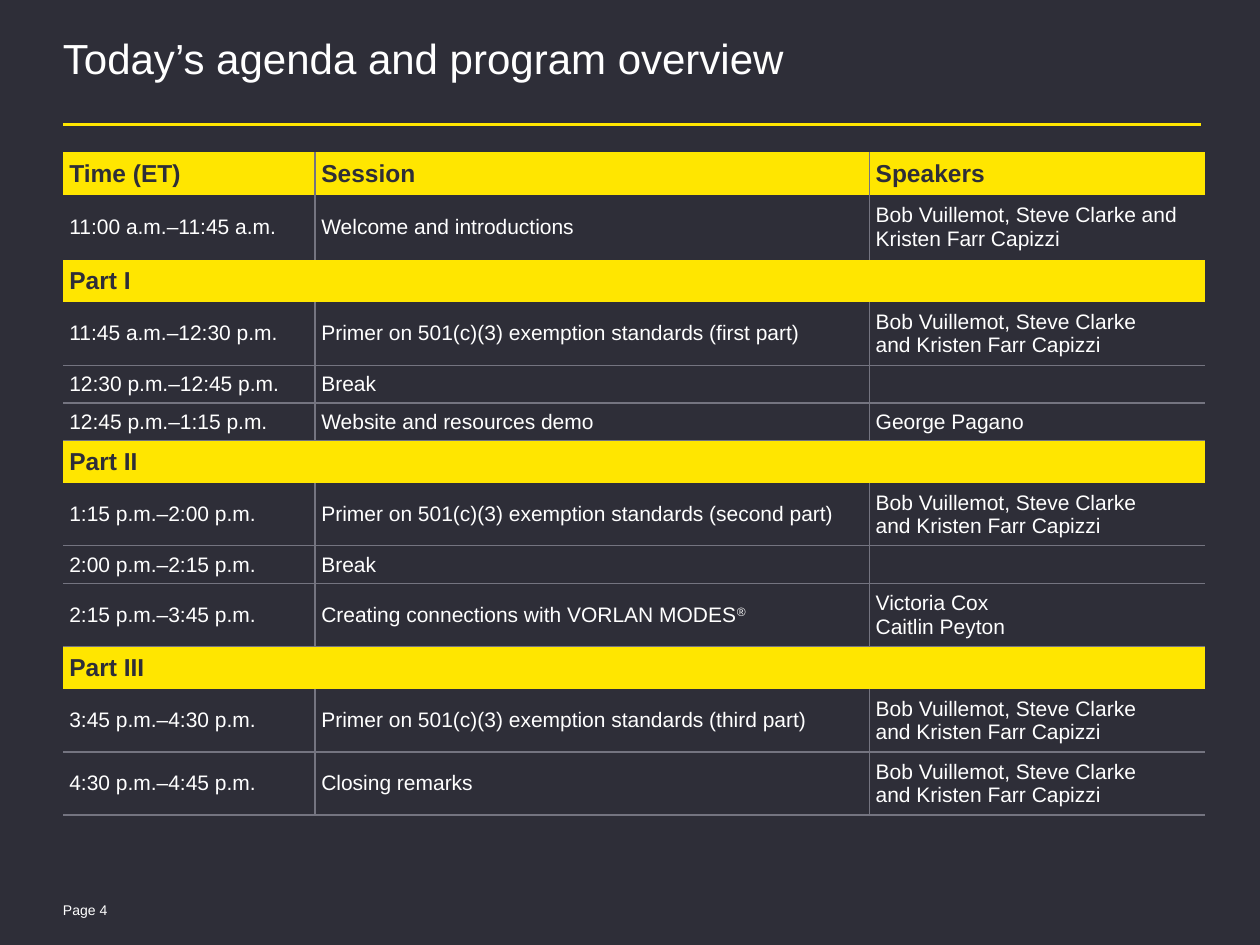
from dataclasses import dataclass

from pptx import Presentation
from pptx.dml.color import RGBColor
from pptx.enum.shapes import MSO_CONNECTOR
from pptx.enum.text import MSO_ANCHOR
from pptx.oxml.xmlchemy import OxmlElement
from pptx.util import Inches, Pt


@dataclass(frozen=True)
class Theme:
    font: str = "Arial"
    dark: RGBColor = RGBColor(0x2E, 0x2E, 0x38)
    yellow: RGBColor = RGBColor(0xFF, 0xE6, 0x00)
    white: RGBColor = RGBColor(0xFF, 0xFF, 0xFF)
    grey: RGBColor = RGBColor(0x74, 0x74, 0x80)
    title_size: int = 24
    bar_size: int = 14
    body_size: int = 12
    page_size: int = 8
    rule_width: float = 1.5
    border_width: float = 0.75


THEME = Theme()
PLAIN_TABLE_STYLE = "{2D5ABB26-0587-4C30-8999-92F81FD0307C}"
COLUMN_WIDTHS = (2, 4.4, 2.66)
BAR_HEIGHT = 0.32
HOSTS = "Bob Vuillemot, Steve Clarke\nand Kristen Farr Capizzi"
AGENDA = [
    (BAR_HEIGHT, "Time (ET)", "Session", "Speakers"),
    (0.52, "11:00 a.m.–11:45 a.m.", "Welcome and introductions",
     "Bob Vuillemot, Steve Clarke and Kristen Farr Capizzi"),
    (BAR_HEIGHT, "Part I"),
    (0.5, "11:45 a.m.–12:30 p.m.", "Primer on 501(c)(3) exemption standards (first part)", HOSTS),
    (0.3, "12:30 p.m.–12:45 p.m.", "Break", ""),
    (0.3, "12:45 p.m.–1:15 p.m.", "Website and resources demo", "George Pagano"),
    (BAR_HEIGHT, "Part II"),
    (0.47, "1:15 p.m.–2:00 p.m.", "Primer on 501(c)(3) exemption standards (second part)", HOSTS),
    (0.29, "2:00 p.m.–2:15 p.m.", "Break", ""),
    (0.48, "2:15 p.m.–3:45 p.m.", "Creating connections with VORLAN MODES®",
     "Victoria Cox\nCaitlin Peyton"),
    (BAR_HEIGHT, "Part III"),
    (0.5, "3:45 p.m.–4:30 p.m.", "Primer on 501(c)(3) exemption standards (third part)", HOSTS),
    (0.5, "4:30 p.m.–4:45 p.m.", "Closing remarks", HOSTS),
]


def style_run(run, size, color, bold=False):
    run.font.name = THEME.font
    run.font.size = Pt(size)
    run.font.color.rgb = color
    run.font.bold = bold


def add_text(slide, left, top, width, height, text, size, anchor):
    shape = slide.shapes.add_textbox(Inches(left), Inches(top), Inches(width), Inches(height))
    frame = shape.text_frame
    frame.word_wrap = True
    frame.vertical_anchor = anchor
    frame.margin_left = frame.margin_right = frame.margin_top = frame.margin_bottom = 0
    frame.text = text
    style_run(frame.paragraphs[0].runs[0], size, THEME.white)
    return frame.paragraphs[0]


def add_header(slide, left, top, width):
    title = add_text(slide, left, top, width, 0.65, "Today’s agenda and program overview",
                     THEME.title_size, MSO_ANCHOR.TOP)
    title.line_spacing = 0.85
    rule_top = Inches(top + 0.67)
    rule = slide.shapes.add_connector(MSO_CONNECTOR.STRAIGHT, Inches(left), rule_top,
                                      Inches(left + width), rule_top)
    rule.line.color.rgb = THEME.yellow
    rule.line.width = Pt(THEME.rule_width)
    rule._element.spPr.append(OxmlElement("a:effectLst"))


def add_borders(cell, sides):
    properties = cell._tc.get_or_add_tcPr()
    for side in sides:
        line = OxmlElement(f"a:ln{side}")
        line.set("w", str(Pt(THEME.border_width)))
        fill = OxmlElement("a:solidFill")
        color = OxmlElement("a:srgbClr")
        color.set("val", str(THEME.grey))
        fill.append(color)
        line.append(fill)
        properties.append(line)


def write_cell(cell, text, is_bar):
    size = THEME.bar_size if is_bar else THEME.body_size
    cell.vertical_anchor = MSO_ANCHOR.MIDDLE
    cell.margin_left = cell.margin_right = cell.margin_top = cell.margin_bottom = Inches(0.05)
    name, mark, _ = text.partition("®")
    cell.text_frame.text = name
    paragraphs = cell.text_frame.paragraphs
    if mark:
        run = paragraphs[0].add_run()
        run.text = mark
        run._r.get_or_add_rPr().set("baseline", "30000")
    for paragraph in paragraphs:
        for run in paragraph.runs:
            style_run(run, size, THEME.dark if is_bar else THEME.white, is_bar)
    if not text:
        end = OxmlElement("a:endParaRPr")
        end.set("sz", str(size * 100))
        paragraphs[0]._p.append(end)
    if is_bar:
        cell.fill.solid()
        cell.fill.fore_color.rgb = THEME.yellow
    else:
        cell.fill.background()


def border_sides(row, column, is_bar):
    last_row, last_column = len(AGENDA) - 1, len(COLUMN_WIDTHS) - 1
    if len(AGENDA[row]) == 2:
        return ""
    rules = {
        "L": column > 0,
        "R": column < last_column,
        "T": row > 0 and not is_bar[row] and not is_bar[row - 1],
        "B": not is_bar[row] and (row == last_row or not is_bar[row + 1]),
    }
    return [side for side, shown in rules.items() if shown]


def add_agenda(slide, left, top):
    height = sum(row[0] for row in AGENDA)
    frame = slide.shapes.add_table(len(AGENDA), len(COLUMN_WIDTHS), Inches(left), Inches(top),
                                   Inches(sum(COLUMN_WIDTHS)), Inches(height))
    table = frame.table
    table.horz_banding = False
    table._tbl.tblPr.find("{*}tableStyleId").text = PLAIN_TABLE_STYLE
    for column, width in zip(table.columns, COLUMN_WIDTHS):
        column.width = Inches(width)
    is_bar = [row[0] == BAR_HEIGHT for row in AGENDA]
    for row, (row_height, *texts) in enumerate(AGENDA):
        table.rows[row].height = Inches(row_height)
        if len(texts) == 1:
            table.cell(row, 0).merge(table.cell(row, len(COLUMN_WIDTHS) - 1))
        for column, text in enumerate(texts):
            cell = table.cell(row, column)
            add_borders(cell, border_sides(row, column, is_bar))
            write_cell(cell, text, is_bar[row])


def main():
    presentation = Presentation()
    presentation.slide_width = Inches(10)
    presentation.slide_height = Inches(7.5)
    slide = presentation.slides.add_slide(presentation.slide_layouts[6])
    slide.background.fill.solid()
    slide.background.fill.fore_color.rgb = THEME.dark
    add_header(slide, 0.5, 0.32, 9.03)
    add_agenda(slide, 0.5, 1.21)
    add_text(slide, 0.5, 7.12, 0.63, 0.2, "Page 4", THEME.page_size, MSO_ANCHOR.MIDDLE)
    presentation.save("out.pptx")


if __name__ == "__main__":
    main()
